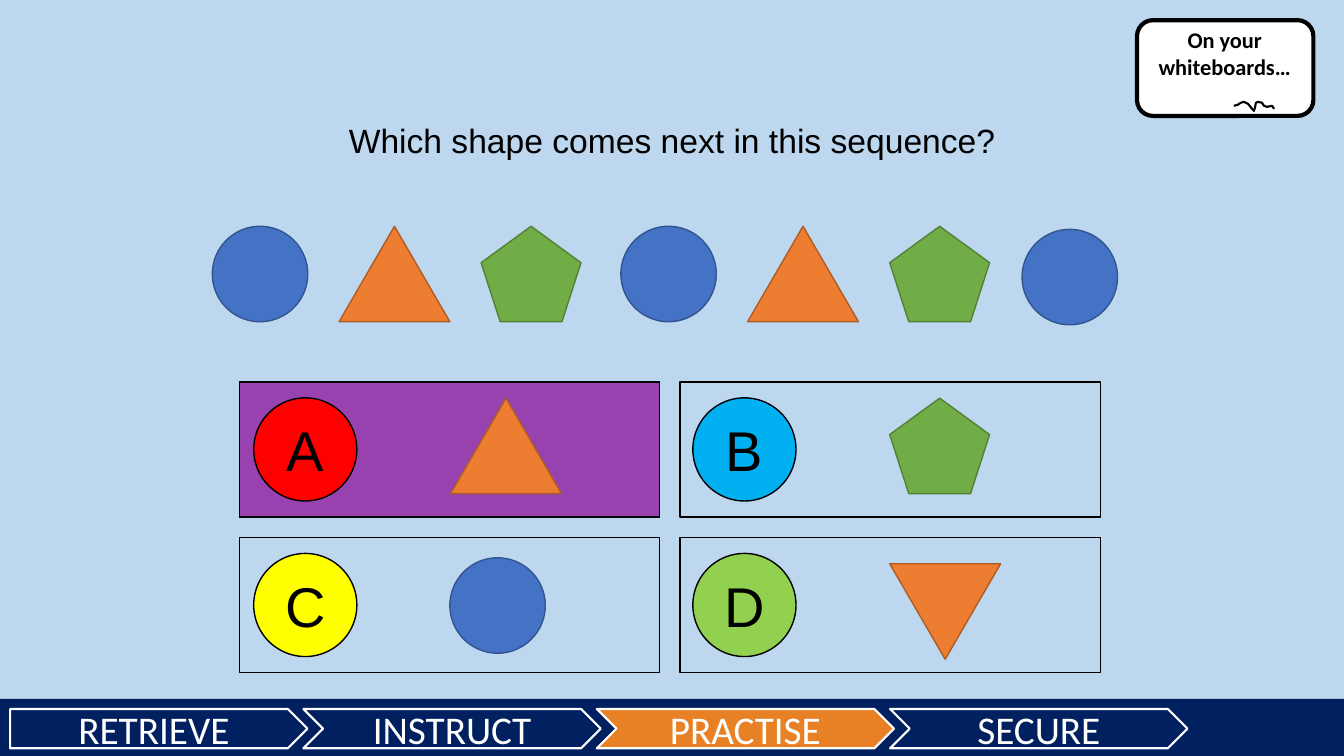
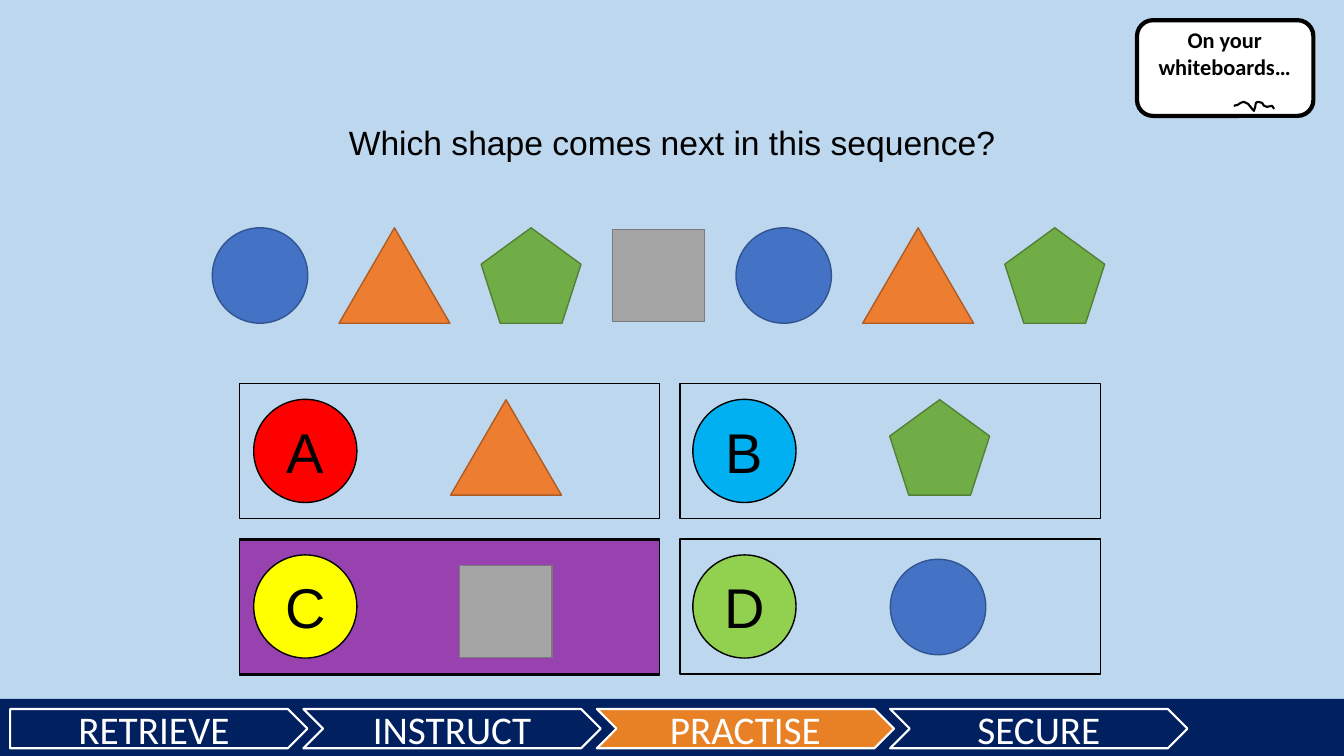
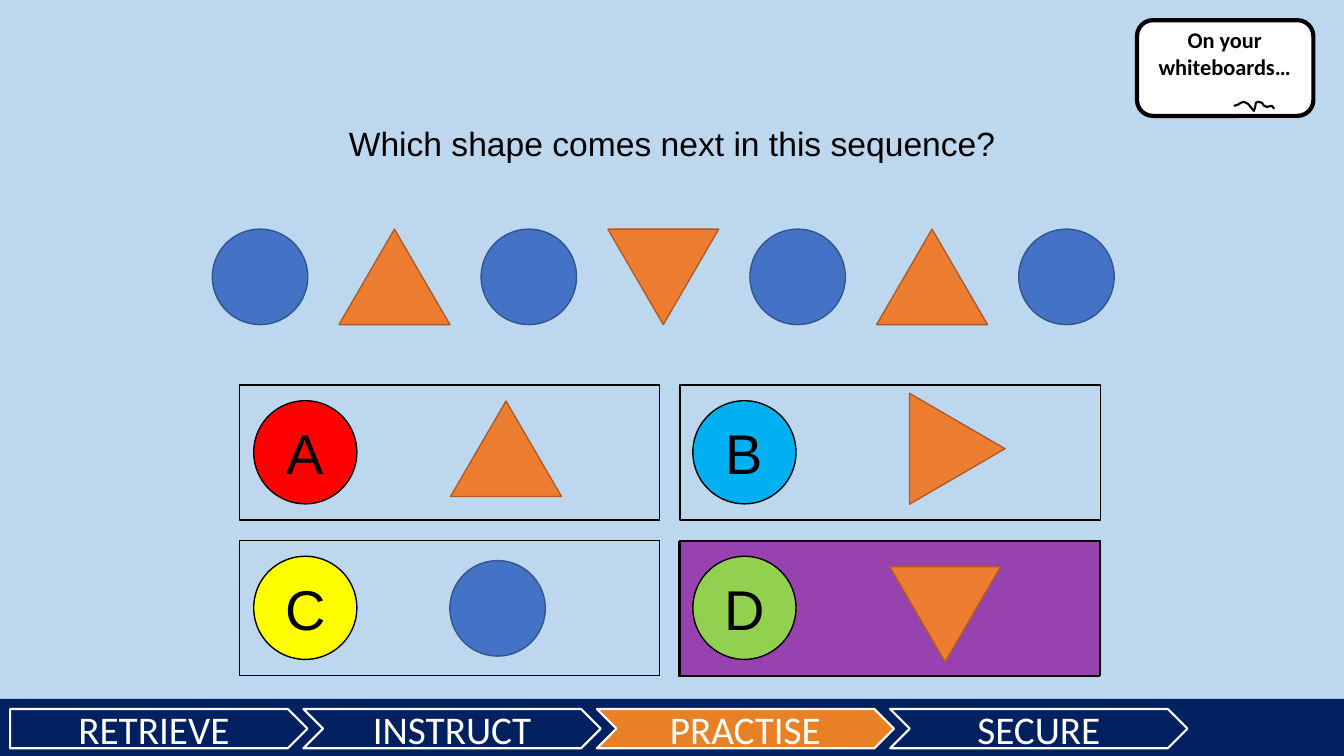
from itertools import product

from pptx import Presentation
from pptx.dml.color import RGBColor as RGB
from pptx.enum.shapes import MSO_SHAPE as SHAPE
from pptx.enum.text import MSO_ANCHOR as ANCHOR, MSO_AUTO_SIZE as AUTO, PP_ALIGN as ALIGN
from pptx.util import Inches, Pt

SKY, NAVY, AMBER = RGB(0xBD, 0xD7, 0xEE), RGB(0x00, 0x20, 0x60), RGB(0xE8, 0x81, 0x26)
BLACK, WHITE, PURPLE = RGB(0, 0, 0), RGB(0xFF, 0xFF, 0xFF), RGB(0x98, 0x42, 0xB0)
RED, CYAN = RGB(0xFF, 0, 0), RGB(0x00, 0xB0, 0xF0)
YELLOW, LIME = RGB(0xFF, 0xFF, 0), RGB(0x92, 0xD0, 0x50)
BLUE, BLUE_EDGE = RGB(0x44, 0x72, 0xC4), RGB(0x32, 0x54, 0x91)
ORANGE, ORANGE_EDGE = RGB(0xED, 0x7D, 0x31), RGB(0xAF, 0x5C, 0x24)
GREEN, GREEN_EDGE = RGB(0x70, 0xAD, 0x47), RGB(0x53, 0x80, 0x35)
GREY, GREY_EDGE = RGB(0xA5, 0xA5, 0xA5), RGB(0x7A, 0x7A, 0x7A)

COLS, ROWS = 80, 45
SYMBOL_H, SYMBOL_GAP = 5.68, 1.86
SYMBOLS = {
    "circle": (SHAPE.OVAL, 5.68, 5.68, 0, BLUE, BLUE_EDGE),
    "triangle": (SHAPE.ISOSCELES_TRIANGLE, 6.6, 5.68, 0, ORANGE, ORANGE_EDGE),
    "down": (SHAPE.ISOSCELES_TRIANGLE, 6.6, 5.68, 180, ORANGE, ORANGE_EDGE),
    "right": (SHAPE.ISOSCELES_TRIANGLE, 6.6, 5.68, 90, ORANGE, ORANGE_EDGE),
    "pentagon": (SHAPE.REGULAR_PENTAGON, 5.95, 5.68, 0, GREEN, GREEN_EDGE),
    "square": (SHAPE.RECTANGLE, 5.5, 5.5, 0, GREY, GREY_EDGE),
}
BADGES = {"A": RED, "B": CYAN, "C": YELLOW, "D": LIME}
STAGES = ["RETRIEVE", "INSTRUCT", "PRACTISE", "SECURE"]
SCRIBBLE = [(0, 4), (4, 3), (7, 1), (10, 0), (14, 2), (15, 3), (19, 8), (20, 9), (21, 6),
            (22, 1), (24, 0), (28, 1), (30, 4), (33, 5), (38, 4), (40, 7)]

QUIZ = [
    dict(dy=0, answer="A", nudge=(0, 0),
         rows=[(12.64, 0, ["circle", "triangle", "pentagon"]),
               (36.96, 0, ["circle", "triangle", "pentagon"]),
               (60.84, 0.18, ["circle"])],
         options=[("triangle", 0, 0.96), ("pentagon", 0, 0.96),
                  ("circle", -0.04, 1.2), ("down", 0, 1.56)]),
    dict(dy=0.09, answer="C", nudge=(0, 0.06),
         rows=[(12.64, 0, ["circle", "triangle", "pentagon", "square",
                           "circle", "triangle", "pentagon"])],
         options=[("triangle", 0, 0.96), ("pentagon", 0, 0.96),
                  ("square", 0.55, 1.48), ("circle", 0.04, 1.2)]),
    dict(dy=0.17, answer="D", nudge=(-0.06, 0.06),
         rows=[(12.64, 0, ["circle", "triangle", "circle", "down",
                           "circle", "triangle", "circle"])],
         options=[("triangle", 0, 0.96), ("right", 0.72, 0.96),
                  ("circle", -0.04, 1.2), ("down", 0, 1.56)]),
]


def write(tf, text, size, font="Arial", color=BLACK, bold=False, anchor=ANCHOR.MIDDLE):
    tf.word_wrap = True
    tf.auto_size = AUTO.NONE
    tf.vertical_anchor = anchor
    p = tf.paragraphs[0]
    p.alignment = ALIGN.CENTER
    r = p.add_run()
    r.text = text
    r.font.size, r.font.name, r.font.bold = Pt(size), font, bold
    r.font.color.rgb = color


class Deck:
    def __init__(self):
        self.prs = Presentation()
        self.prs.slide_width, self.prs.slide_height = Inches(13.33), Inches(7.5)
        self.layout = self.prs.slide_layouts[5]
        self.s = None

    def at(self, *cells):
        units = (self.prs.slide_width / COLS, self.prs.slide_height / ROWS) * 2
        return [round(c * u) for c, u in zip(cells, units)]

    def shape(self, kind, *cells, fill=None, line=BLACK, width=1, shapes=None):
        target = self.s.shapes if shapes is None else shapes
        sp = target.add_shape(kind, *self.at(*cells))
        self.paint(sp, fill, line, width)
        return sp

    def paint(self, sp, fill, line, width):
        sp.shadow.inherit = False
        if fill is None:
            sp.fill.background()
        else:
            sp.fill.solid()
            sp.fill.fore_color.rgb = fill
        if line is None:
            sp.line.fill.background()
        else:
            sp.line.color.rgb = line
            sp.line.width = Pt(width)

    def slide(self, title, dy):
        self.s = self.prs.slides.add_slide(self.layout)
        if len(self.prs.slides) == 1:
            self.shared_parts()
        sp = self.s.shapes.title
        sp.left, sp.top, sp.width, sp.height = self.at(11.65, 6.84 + dy, 56.7, 3)
        write(sp.text_frame, title, 24, anchor=ANCHOR.TOP)
        self.whiteboard()

    def shared_parts(self):
        bg = self.layout.background.fill
        bg.solid()
        bg.fore_color.rgb = SKY
        parts = [self.shape(SHAPE.RECTANGLE, 0, 41.6, COLS, 3.4, fill=NAVY, line=None)]
        for i, stage in enumerate(STAGES):
            sp = self.shape(SHAPE.CHEVRON if i else SHAPE.PENTAGON, 0.6 + 17.46 * i, 42.2,
                            17.7, 2.34, fill=AMBER if stage == "PRACTISE" else NAVY,
                            line=WHITE, width=1.5)
            write(sp.text_frame, stage, 28, "Calibri", WHITE)
            parts.append(sp)
        for i, sp in enumerate(parts):
            sp.element.xpath(".//p:cNvPr")[0].set("id", str(100 + i))
            self.layout.shapes.element.append(sp.element)

    def whiteboard(self):
        shapes = self.s.shapes.add_group_shape().shapes
        self.shape(SHAPE.ROUNDED_RECTANGLE, 67.68, 1.2, 10.5, 5.7,
                   fill=WHITE, width=3, shapes=shapes)
        tb = shapes.add_textbox(*self.at(67.98, 1.26, 9.84, 3.84))
        write(tb.text_frame, "On your whiteboards…", 16, "Calibri", bold=True,
              anchor=ANCHOR.TOP)
        points = [self.at(73.44 + 0.06 * x, 6.06 + 0.06 * y) for x, y in SCRIBBLE]
        fb = shapes.build_freeform(*points[0])
        fb.add_line_segments(points[1:], close=False)
        self.paint(fb.convert_to_shape(), None, BLACK, 1.5)

    def symbol(self, name, x, y):
        kind, w, h, turn, fill, line = SYMBOLS[name]
        sp = self.shape(kind, x, y + (SYMBOL_H - h) / 2, w, h, fill=fill, line=line)
        sp.rotation = turn
        return w

    def sequence(self, x, y, names):
        for name in names:
            x += self.symbol(name, x, y) + SYMBOL_GAP

    def options(self, symbols, dy, answer, nudge):
        cells = list(product((0, 1), (0, 1)))
        frames = [(14.25 + 26.23 * col, 22.74 + dy + 9.26 * row) for row, col in cells]
        x, y = frames[list(BADGES).index(answer)]
        self.shape(SHAPE.RECTANGLE, x + nudge[0], y + nudge[1], 25.02, 8.04, fill=PURPLE)
        for (x, y), (_, col), letter, (name, dx, drop) in zip(frames, cells, BADGES, symbols):
            self.shape(SHAPE.RECTANGLE, x, y, 25.02, 8.04)
            badge = self.shape(SHAPE.OVAL, 15.1 + 26.14 * col, y + 0.94, 6.14, 6.14,
                               fill=BADGES[letter])
            write(badge.text_frame, letter, 40)
            self.symbol(name, 26.82 + 26.14 * col + dx, y + drop)


def main():
    deck = Deck()
    for q in QUIZ:
        deck.slide("Which shape comes next in this sequence?", q["dy"])
        for x, drop, names in q["rows"]:
            deck.sequence(x, 13.47 + q["dy"] + drop, names)
        deck.options(q["options"], q["dy"], q["answer"], q["nudge"])
    deck.prs.save("out.pptx")


if __name__ == "__main__":
    main()
